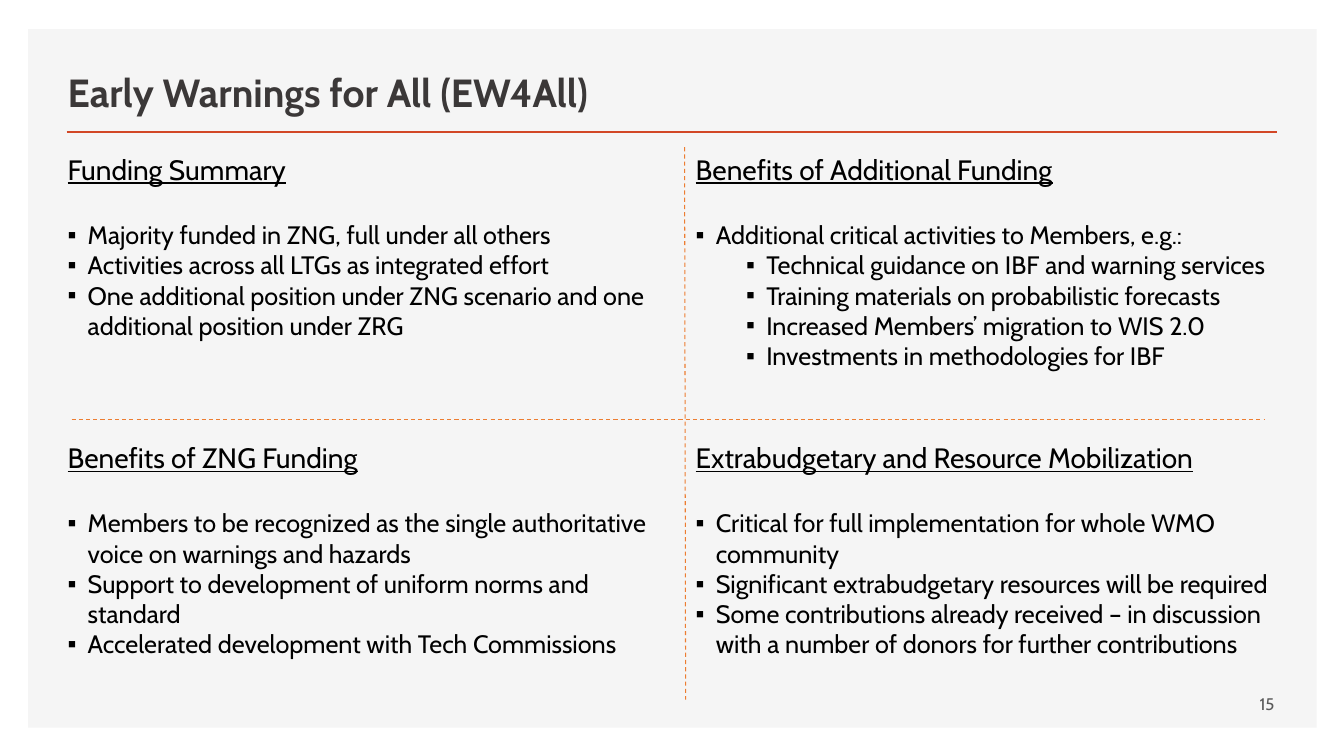
from dataclasses import dataclass

from lxml import etree
from pptx import Presentation
from pptx import util as u
from pptx.dml.color import RGBColor
from pptx.enum import dml, shapes, text
from pptx.oxml.ns import qn


@dataclass(frozen=True)
class Theme:
    font: str = "Cabin"
    panel: str = "F5F5F5"
    rule: str = "D24726"
    dash: str = "ED7D31"
    title: str = "3B3838"
    ink: str = "000000"
    page: str = "595959"
    big: int = 28
    head: int = 20
    body: int = 18
    small: int = 12


T = Theme()
WIDE, HIGH = 13.33, 7.5
COLS, ROWS = (0.57, 6.8), (1.46, 4.32)
CELL = (6.1, 2.63)
HANG, STEP = 0.2, 0.5

# Each cell: heading, then (level, text) items, row by row
CELLS = [
    ("Funding Summary", [
        (0, "Majority funded in ZNG, full under all others"),
        (0, "Activities across all LTGs as integrated effort"),
        (0, "One additional position under ZNG scenario and one "
            "additional position under ZRG")]),
    ("Benefits of Additional Funding", [
        (0, "Additional critical activities to Members, e.g.:"),
        (1, "Technical guidance on IBF and warning services"),
        (1, "Training materials on probabilistic forecasts"),
        (1, "Increased Members’ migration to WIS 2.0"),
        (1, "Investments in methodologies for IBF")]),
    ("Benefits of ZNG Funding", [
        (0, "Members to be recognized as the single authoritative "
            "voice on warnings and hazards"),
        (0, "Support to development of uniform norms and standard"),
        (0, "Accelerated development with Tech Commissions")]),
    ("Extrabudgetary and Resource Mobilization", [
        (0, "Critical for full implementation for whole WMO community"),
        (0, "Significant extrabudgetary resources will be required"),
        (0, "Some contributions already received – in discussion "
            "with a number of donors for further contributions")]),
]


def place(shape, left, top, width, height, anchor=text.MSO_ANCHOR.TOP):
    """Set the box of a text shape and return its frame, ready to fill."""
    shape.left, shape.top = u.Inches(left), u.Inches(top)
    shape.width, shape.height = u.Inches(width), u.Inches(height)
    frame = shape.text_frame
    frame.word_wrap = True
    frame.auto_size = text.MSO_AUTO_SIZE.NONE
    frame.vertical_anchor = anchor
    return frame


def write(para, words, size=T.body, color=T.ink, bold=False, under=False,
          align=text.PP_ALIGN.LEFT, after=0, level=0, mark=None):
    para.level, para.alignment = level, align
    para.line_spacing = 1.0
    para.space_before, para.space_after = u.Pt(0), u.Pt(after)
    run = para.add_run()
    run.text = words
    font = run.font
    font.name, font.size = T.font, u.Pt(size)
    font.bold, font.underline = bold, under
    font.color.rgb = RGBColor.from_string(color)
    bullet(para, level, mark)


def bullet(para, level, mark):
    """Hang the paragraph on a mark, or clear the inherited bullet."""
    props = para._p.get_or_add_pPr()
    hang = u.Inches(HANG) if mark else 0
    props.set("marL", str(hang + u.Inches(STEP * level)))
    props.set("indent", str(-hang))
    if mark:
        etree.SubElement(props, qn("a:buFont")).set("typeface", "Arial")
        etree.SubElement(props, qn("a:buChar")).set("char", mark)
    else:
        etree.SubElement(props, qn("a:buNone"))


def line(slide, x1, y1, x2, y2, color, width, dash=None):
    ends = [u.Inches(v) for v in (x1, y1, x2, y2)]
    link = slide.shapes.add_connector(shapes.MSO_CONNECTOR.STRAIGHT, *ends)
    link.line.color.rgb = RGBColor.from_string(color)
    link.line.width = u.Pt(width)
    if dash:
        link.line.dash_style = dash
    etree.SubElement(link._element.spPr, qn("a:effectLst"))


def panel(slide):
    """Lay the grey panel behind everything else."""
    box = [u.Inches(v) for v in (0.28, 0.29, 12.78, 6.93)]
    card = slide.shapes.add_shape(shapes.MSO_SHAPE.RECTANGLE, *box)
    card.shadow.inherit = False
    card.fill.solid()
    card.fill.fore_color.rgb = RGBColor.from_string(T.panel)
    card.line.fill.background()
    slide.shapes._spTree.insert(2, card._element)


def fill(holder, spot, head, items):
    """Fill one cell of the two by two grid."""
    row, col = divmod(spot, len(COLS))
    frame = place(holder, COLS[col], ROWS[row], *CELL)
    write(frame.paragraphs[0], head, size=T.head, under=True, after=24)
    for level, words in items:
        write(frame.add_paragraph(), words, level=level, mark="▪")


def main():
    deck = Presentation()
    deck.slide_width, deck.slide_height = u.Inches(WIDE), u.Inches(HIGH)
    slide = deck.slides.add_slide(deck.slide_layouts.get_by_name("Comparison"))
    panel(slide)
    line(slide, 0.66, 1.31, 12.67, 1.31, T.rule, 2)

    frame = place(slide.shapes.title, COLS[0], 0.49, 9.37, 0.7,
                  text.MSO_ANCHOR.BOTTOM)
    write(frame.paragraphs[0], "Early Warnings for All (EW4All)",
          size=T.big, color=T.title, bold=True)

    holders = list(slide.placeholders)[1:]
    for spot, (holder, cell) in enumerate(zip(holders, CELLS)):
        fill(holder, spot, *cell)

    dash = dml.MSO_LINE.DASH
    line(slide, 6.79, ROWS[0], 6.8, 6.94, T.dash, 0.75, dash)
    line(slide, 0.71, 4.16, 12.54, 4.16, T.dash, 0.75, dash)

    page = slide.shapes.add_textbox(0, 0, 0, 0)
    frame = place(page, 9.16, 6.78, 3.58, 0.4, text.MSO_ANCHOR.MIDDLE)
    write(frame.paragraphs[0], "15", size=T.small, color=T.page,
          align=text.PP_ALIGN.RIGHT)
    deck.save("out.pptx")


if __name__ == "__main__":
    main()
